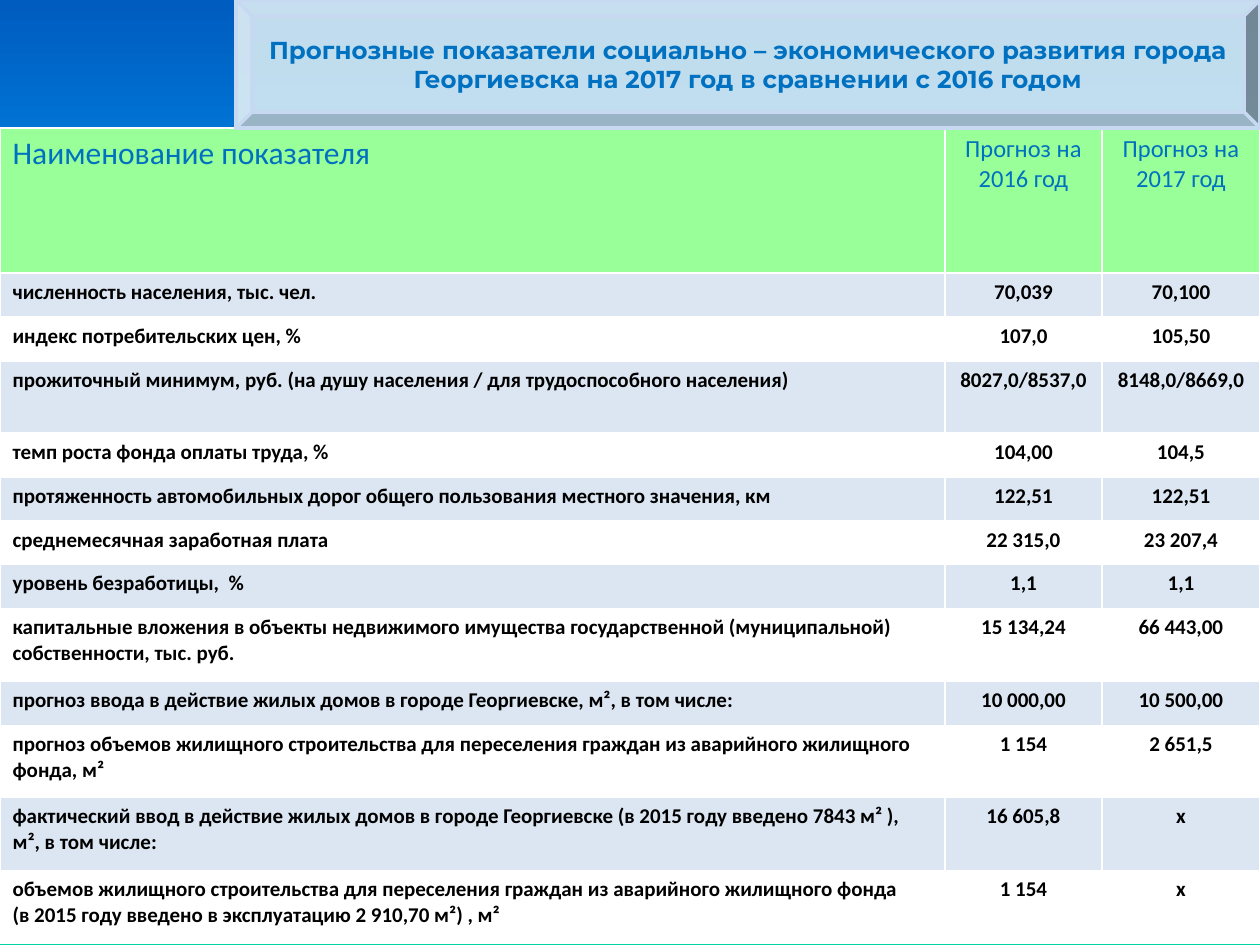
from lxml.etree import SubElement
from pptx import Presentation
from pptx.dml.color import RGBColor
from pptx.enum.shapes import MSO_SHAPE as Shape
from pptx.enum.text import MSO_ANCHOR as Anchor, PP_ALIGN as Align
from pptx.oxml import parse_xml
from pptx.oxml.ns import nsdecls, qn
from pptx.util import Emu, Pt

# Content
TITLE = ("Прогнозные показатели социально – экономического развития города "
         "Георгиевска на 2017 год в сравнении с 2016 годом")
HEAD = ("Наименование показателя", "Прогноз на 2016 год", "Прогноз на 2017 год")
# Row height in px, then the three cells
ROWS = [
    (44, "численность населения, тыс. чел.", "70,039", "70,100"),
    (44, "индекс потребительских цен, %", "107,0", "105,50"),
    (72, "прожиточный минимум, руб. (на душу населения / для трудоспособного населения)",
     "8027,0/8537,0", "8148,0/8669,0"),
    (44, "темп роста фонда оплаты труда, %", "104,00", "104,5"),
    (44, "протяженность автомобильных дорог общего пользования местного значения, км",
     "122,51", "122,51"),
    (44, "среднемесячная заработная плата", "22 315,0", "23 207,4"),
    (44, "уровень безработицы,  %", "1,1", "1,1"),
    (73, "капитальные вложения в объекты недвижимого имущества государственной "
     "(муниципальной) собственности, тыс. руб.", "15 134,24", "66 443,00"),
    (44, "прогноз ввода в действие жилых домов в городе Георгиевске, м², в том числе:",
     "10 000,00", "10 500,00"),
    (72, "прогноз объемов жилищного строительства для переселения граждан из "
     "аварийного жилищного фонда, м²", "1 154", "2 651,5"),
    (73, "фактический ввод в действие жилых домов в городе Георгиевске "
     "(в 2015 году введено 7843 м² ), м², в том числе:", "16 605,8", "х"),
    (73, "объемов жилищного строительства для переселения граждан из аварийного "
     "жилищного фонда\n(в 2015 году введено в эксплуатацию 2 910,70 м²) , м²",
     "1 154", "х"),
]
COLS = (945, 157, 158)
HEAD_H = 145

# Look
BLUE = RGBColor(0x00, 0x70, 0xC0)
BLACK = RGBColor(0x00, 0x00, 0x00)
WHITE = RGBColor(0xFF, 0xFF, 0xFF)
GREEN = RGBColor(0x99, 0xFF, 0x99)
BAND = RGBColor(0xDC, 0xE6, 0xF2)
PALE = RGBColor(0xDB, 0xEE, 0xF4)
EDGE = RGBColor(0xC6, 0xD9, 0xF1)
SKY = [(0, RGBColor(0x03, 0xD4, 0xA8)), (25, RGBColor(0x21, 0xD6, 0xE0)),
       (75, RGBColor(0x00, 0x87, 0xE6)), (100, RGBColor(0x00, 0x5C, 0xBF))]
WIDE, HIGH, BAR = 1260, 945, 128


def px(n):
    return Emu(n * 914400 // 126)


def style(frame, face, size, color, bold, align):
    for para in frame.paragraphs:
        para.alignment = align
        for run in para.runs:
            font = run.font
            font.name, font.size, font.bold = face, Pt(size), bold
            font.color.rgb = color


def paint_back(slide):
    stops = "".join(f'<a:gs pos="{at * 1000}"><a:srgbClr val="{color}"/></a:gs>'
                    for at, color in SKY)
    slide.element.cSld.insert(0, parse_xml(
        f'<p:bg {nsdecls("p", "a")}><p:bgPr><a:gradFill><a:gsLst>{stops}</a:gsLst>'
        '<a:lin ang="16200000" scaled="0"/></a:gradFill><a:effectLst/></p:bgPr></p:bg>'))


def add_grid(slide):
    tall = [HEAD_H] + [row[0] for row in ROWS]
    grid = slide.shapes.add_table(len(tall), len(COLS), 0, px(BAR),
                                  px(WIDE), px(sum(tall))).table
    for col, width in zip(grid.columns, COLS):
        col.width = px(width)
    for row, height in zip(grid.rows, tall):
        row.height = px(height)
    for r, texts in enumerate([HEAD] + [row[1:] for row in ROWS]):
        for c, text in enumerate(texts):
            cell = grid.cell(r, c)
            cell.text_frame.text = text
            cell.fill.solid()
            align = Align.CENTER if c else Align.LEFT
            if r == 0:
                cell.fill.fore_color.rgb = GREEN
                style(cell.text_frame, "Calibri", 14 if c else 18, BLUE, False, align)
            else:
                cell.fill.fore_color.rgb = BAND if r % 2 else WHITE
                style(cell.text_frame, "Calibri", 12, BLACK, True, align)


def add_banner(slide):
    left = 236
    plate = slide.shapes.add_shape(Shape.BEVEL, px(left), 0, px(WIDE - left), px(BAR))
    plate.shadow.inherit = False
    plate.fill.solid()
    plate.fill.fore_color.rgb = PALE
    # Let the background show through a little
    tint = plate.element.spPr.find(qn("a:solidFill"))[0]
    SubElement(tint, qn("a:alpha"), val="88000")
    plate.line.color.rgb = EDGE
    plate.line.width = Pt(2)
    frame = plate.text_frame
    frame.word_wrap = True
    frame.vertical_anchor = Anchor.MIDDLE
    frame.text = TITLE
    style(frame, "Montserrat", 14, BLUE, True, Align.CENTER)


def main():
    deck = Presentation()
    deck.slide_width, deck.slide_height = px(WIDE), px(HIGH)
    slide = deck.slides.add_slide(deck.slide_layouts[6])
    paint_back(slide)
    add_grid(slide)
    add_banner(slide)
    deck.save("out.pptx")


if __name__ == "__main__":
    main()
